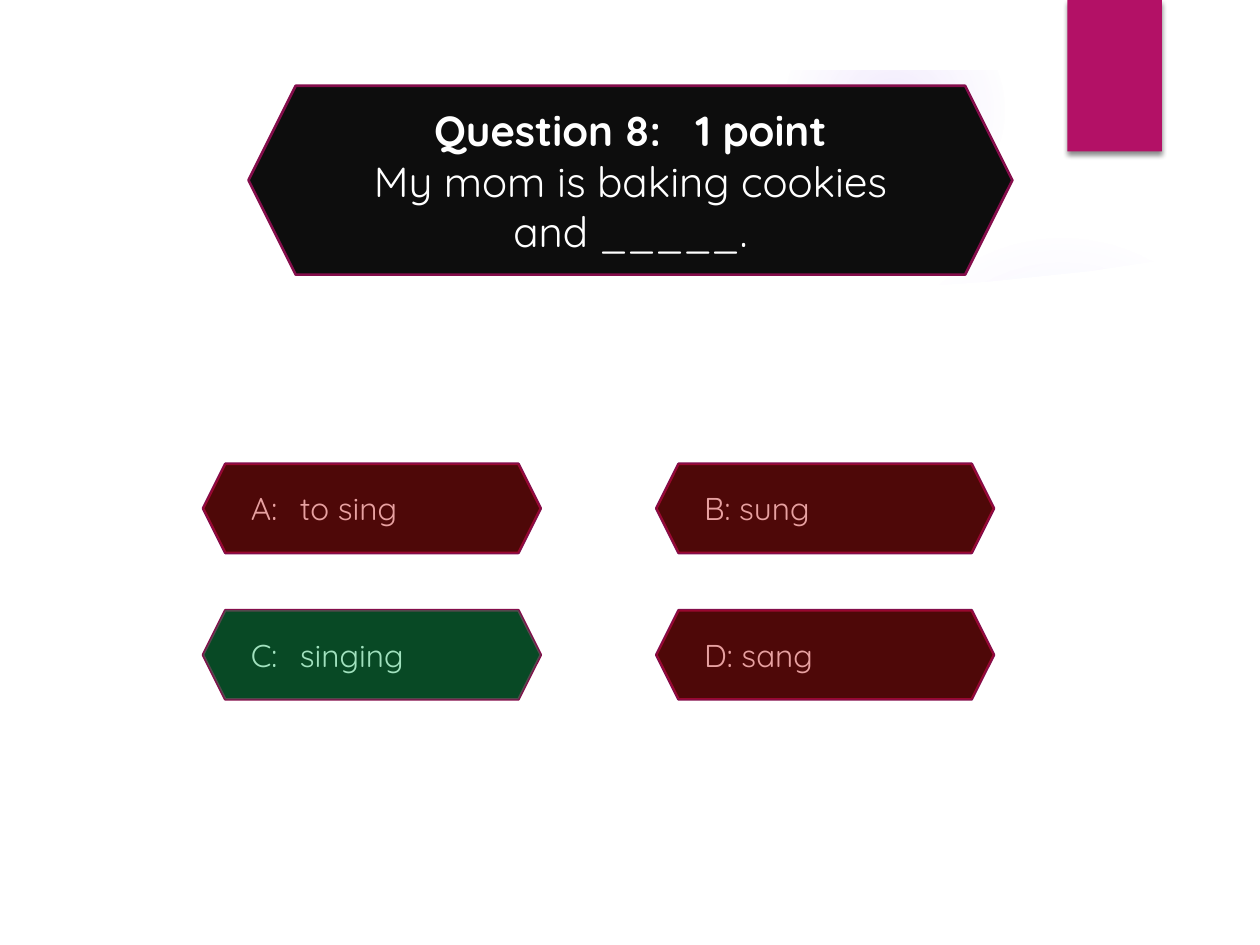
from lxml import etree
from pptx import Presentation
from pptx.dml.color import RGBColor
from pptx.enum import shapes, text
from pptx.oxml import ns, parse_xml
from pptx.util import Pt

WHITE = RGBColor(0xFF, 0xFF, 0xFF)
BLACK = RGBColor(0x0D, 0x0D, 0x0D)
MAGENTA = RGBColor(0xB3, 0x11, 0x66)
PLUM = RGBColor(0x84, 0x0D, 0x4B)
RED = RGBColor(0xC0, 0x00, 0x00)
GREEN = RGBColor(0x00, 0xB0, 0x50)
VIOLET = RGBColor(0x9B, 0x6B, 0xF2)

FONT = "Quicksand"
SLIDE_WIDTH, SLIDE_HEIGHT = 720, 540
ANSWER_WIDTH, ANSWER_HEIGHT = 193, 51
COLUMNS = (116, 375)
ROWS = (265, 348.7)
ANSWERS = [
    (("A:\tto sing", RED), ("B: sung", RED)),
    (("C:\tsinging", GREEN), ("D: sang", RED)),
]


def add_child(parent, tag, **attributes):
    return etree.SubElement(parent, ns.qn(tag), attributes)


def set_alpha(shape, percent):
    color = shape.fill._xPr.find(ns.qn("a:solidFill"))[0]
    add_child(color, "a:alpha", val=str(percent * 1000))


def style_shape(shape, fill, line=None):
    shape.shadow.inherit = False
    shape.fill.solid()
    shape.fill.fore_color.rgb = fill
    if line is None:
        shape.line.fill.background()
    else:
        shape.line.color.rgb = line
        shape.line.width = Pt(1.5)


def add_preset(slide, kind, box, fill, line=None):
    shape = slide.shapes.add_shape(kind, *map(Pt, box))
    style_shape(shape, fill, line)
    return shape


def add_outline(slide, contours, fill):
    """Draw one filled freeform; a second contour cuts a hole."""
    builder = None
    for start, *rest in contours:
        if builder is None:
            builder = slide.shapes.build_freeform(*start, scale=Pt(1))
        else:
            builder.move_to(*start)
        builder.add_line_segments(rest, close=True)
    shape = builder.convert_to_shape()
    style_shape(shape, fill)
    return shape


def add_glow(slide, left, top, size, stops):
    """Draw a circle that fades outwards; stops are (position, alpha) in percent."""
    glow = add_preset(slide, shapes.MSO_SHAPE.OVAL, (left, top, size, size), VIOLET)
    gradient = parse_xml(f'<a:gradFill {ns.nsdecls("a")} rotWithShape="1"/>')
    stop_list = add_child(gradient, "a:gsLst")
    for position, alpha in stops:
        stop = add_child(stop_list, "a:gs", pos=str(position * 1000))
        color = add_child(stop, "a:srgbClr", val=str(VIOLET))
        add_child(color, "a:alpha", val=str(alpha * 1000))
    path = add_child(gradient, "a:path", path="circle")
    add_child(path, "a:fillToRect", l="50000", t="50000", r="50000", b="50000")
    properties = glow._element.spPr
    properties.replace(properties.find(ns.qn("a:solidFill")), gradient)


def add_backdrop(slide):
    add_glow(slide, 496, 132, 222, [(0, 7), (36, 6), (69, 0)])
    add_glow(slide, 448, 0, 126, [(0, 14), (36, 7), (73, 0)])
    sweep = add_outline(
        slide,
        [[(501, 165), (560, 158), (622, 146), (685, 125), (688, 150), (600, 163), (503, 168)]],
        WHITE,
    )
    sweep.rotation = -9.8
    set_alpha(sweep, 20)
    page = [(38, 146), (38, 503), (682, 503), (682, 146), (623, 155), (565, 161),
            (507, 165), (450, 168), (395, 168.5), (316, 168), (243, 166),
            (179, 161), (125, 156), (71, 150)]
    add_outline(slide, [page], WHITE)
    outer = [(0, 0), (0, SLIDE_HEIGHT), (SLIDE_WIDTH, SLIDE_HEIGHT), (SLIDE_WIDTH, 0)]
    inner = [(680, 500), (40, 500), (40, 40), (680, 40)]
    add_outline(slide, [outer, inner], WHITE)


def add_ribbon(slide):
    ribbon = add_preset(slide, shapes.MSO_SHAPE.RECTANGLE, (610, 0, 54, 86.5), MAGENTA)
    effects = ribbon._element.spPr.find(ns.qn("a:effectLst"))
    shadow = add_child(effects, "a:outerShdw", blurRad=str(Pt(3)), dist=str(Pt(2)),
                       dir="5400000", rotWithShape="0")
    color = add_child(shadow, "a:srgbClr", val="000000")
    add_child(color, "a:alpha", val="45000")


def add_run(paragraph, wording, size, bold=False):
    run = paragraph.add_run()
    run.text = wording
    run.font.name = FONT
    run.font.size = Pt(size)
    run.font.bold = bold
    run.font.color.rgb = WHITE
    return run


def add_panel(slide, box):
    panel = add_preset(slide, shapes.MSO_SHAPE.HEXAGON, box, BLACK, PLUM)
    panel.text_frame.word_wrap = True
    panel.text_frame.vertical_anchor = text.MSO_ANCHOR.MIDDLE
    return panel.text_frame


def add_question(slide):
    frame = add_panel(slide, (142, 49, 436.5, 108))
    heading = frame.paragraphs[0]
    add_run(heading, "Question 8:", 24, bold=True)
    gap = add_run(heading, " ", 24, bold=True)
    gap._r.get_or_add_rPr().set("spc", "1300")
    add_run(heading, "1 point", 24, bold=True)
    sentence = frame.add_paragraph()
    add_run(sentence, "My mom is baking cookies and _____.", 24)
    for paragraph in frame.paragraphs:
        paragraph.alignment = text.PP_ALIGN.CENTER


def add_answer(slide, box, wording):
    paragraph = add_panel(slide, box).paragraphs[0]
    paragraph.alignment = text.PP_ALIGN.LEFT
    tabs = add_child(paragraph._p.get_or_add_pPr(), "a:tabLst")
    add_child(tabs, "a:tab", pos=str(Pt(28)), algn="l")
    add_run(paragraph, wording, 18)


def add_verdict(slide, box, color):
    """Tint an answer to show whether it is right."""
    tint = add_preset(slide, shapes.MSO_SHAPE.HEXAGON, box, color)
    set_alpha(tint, 37)


def main():
    presentation = Presentation()
    presentation.slide_width = Pt(SLIDE_WIDTH)
    presentation.slide_height = Pt(SLIDE_HEIGHT)
    slide = presentation.slides.add_slide(presentation.slide_layouts[6])
    add_backdrop(slide)
    add_ribbon(slide)
    add_question(slide)
    for top, answers in zip(ROWS, ANSWERS):
        for left, (wording, color) in zip(COLUMNS, answers):
            box = (left, top, ANSWER_WIDTH, ANSWER_HEIGHT)
            add_answer(slide, box, wording)
            add_verdict(slide, box, color)
    presentation.save("out.pptx")


if __name__ == "__main__":
    main()
